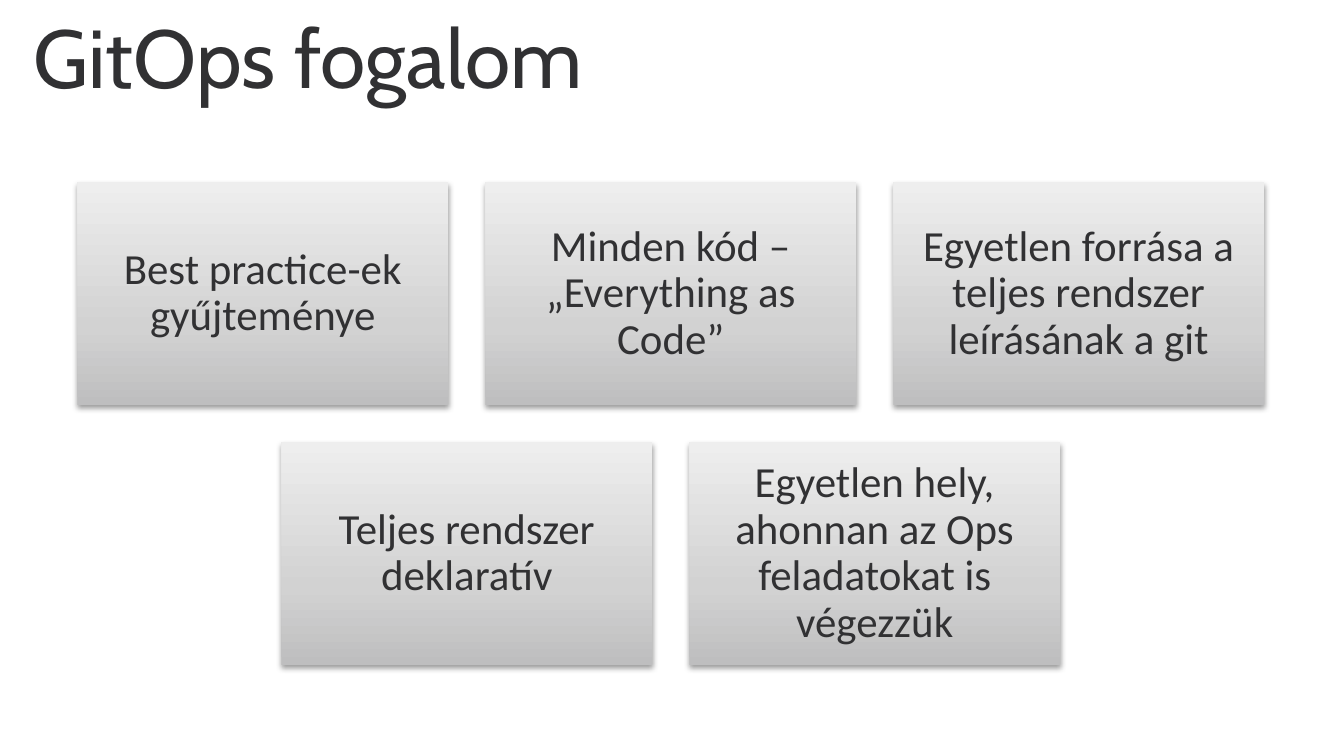
from lxml import etree
from pptx import Presentation
from pptx.dml.color import RGBColor
from pptx.enum.shapes import MSO_SHAPE
from pptx.enum.text import MSO_ANCHOR, PP_ALIGN
from pptx.oxml.ns import qn
from pptx.util import Cm, Pt

RECTANGLE = MSO_SHAPE.RECTANGLE
TOP = MSO_ANCHOR.TOP
MIDDLE = MSO_ANCHOR.MIDDLE
LEFT = PP_ALIGN.LEFT
CENTER = PP_ALIGN.CENTER

TEXT_COLOR = RGBColor(0x31, 0x31, 0x33)
SHADOW_COLOR = RGBColor(0x00, 0x00, 0x00)
GRADIENT_STOPS = [
    (0, RGBColor(0xBE, 0xBE, 0xBF)),
    (35, RGBColor(0xD2, 0xD2, 0xD2)),
    (100, RGBColor(0xEE, 0xEE, 0xEE)),
]

CARD_ROWS = [
    [
        "Best practice-ek gyűjteménye",
        "Minden kód – „Everything as Code”",
        "Egyetlen forrása a teljes rendszer leírásának a git",
    ],
    [
        "Teljes rendszer deklaratív",
        "Egyetlen hely, ahonnan az Ops feladatokat is végezzük",
    ],
]
CARD_WIDTH = 7.01
CARD_HEIGHT = 4.21
CARD_GAP = 0.7
ROWS_TOP = 3.45
ROWS_CENTER = 12.68


def set_text(shape, text, font_name, size, alignment, anchor, line_spacing, margin):
    text_frame = shape.text_frame
    text_frame.text = text
    text_frame.word_wrap = True
    text_frame.vertical_anchor = anchor
    text_frame.margin_left = text_frame.margin_right = margin
    text_frame.margin_top = text_frame.margin_bottom = margin
    paragraph = text_frame.paragraphs[0]
    paragraph.alignment = alignment
    paragraph.line_spacing = line_spacing
    font = paragraph.runs[0].font
    font.name = font_name
    font.size = Pt(size)
    font.color.rgb = TEXT_COLOR


def style_card(card):
    card.line.fill.background()
    card.fill.gradient()
    card.fill.gradient_angle = 90
    properties = card._element.spPr
    stop_list = properties.find(".//" + qn("a:gsLst"))
    for old_stop in list(stop_list):
        stop_list.remove(old_stop)
    for position, color in GRADIENT_STOPS:
        stop = etree.SubElement(stop_list, qn("a:gs"), pos=str(position * 1000))
        etree.SubElement(stop, qn("a:srgbClr"), val=str(color))

    card.shadow.inherit = False
    effects = properties.find(qn("a:effectLst"))
    shadow = etree.SubElement(
        effects, qn("a:outerShdw"), blurRad=str(Pt(3.1)), dist=str(Pt(1.6)),
        dir="5400000", rotWithShape="0",
    )
    shadow_color = etree.SubElement(shadow, qn("a:srgbClr"), val=str(SHADOW_COLOR))
    etree.SubElement(shadow_color, qn("a:alpha"), val="38000")


presentation = Presentation()
presentation.slide_width = Cm(25.4)
presentation.slide_height = Cm(14.29)
slide = presentation.slides.add_slide(presentation.slide_layouts[6])

title = slide.shapes.add_textbox(Cm(0.64), Cm(0.48), Cm(24.23), Cm(1.55))
set_text(title, "GitOps fogalom", "Cabin", 44, LEFT, TOP, 0.8, Cm(0))

for row, texts in enumerate(CARD_ROWS):
    row_width = len(texts) * (CARD_WIDTH + CARD_GAP) - CARD_GAP
    row_left = ROWS_CENTER - row_width / 2
    top = ROWS_TOP + row * (CARD_HEIGHT + CARD_GAP)
    for column, text in enumerate(texts):
        left = row_left + column * (CARD_WIDTH + CARD_GAP)
        card = slide.shapes.add_shape(
            RECTANGLE, Cm(left), Cm(top), Cm(CARD_WIDTH), Cm(CARD_HEIGHT)
        )
        style_card(card)
        set_text(card, text, "Calibri", 23, CENTER, MIDDLE, 0.9, Cm(0.25))

presentation.save("out.pptx")
